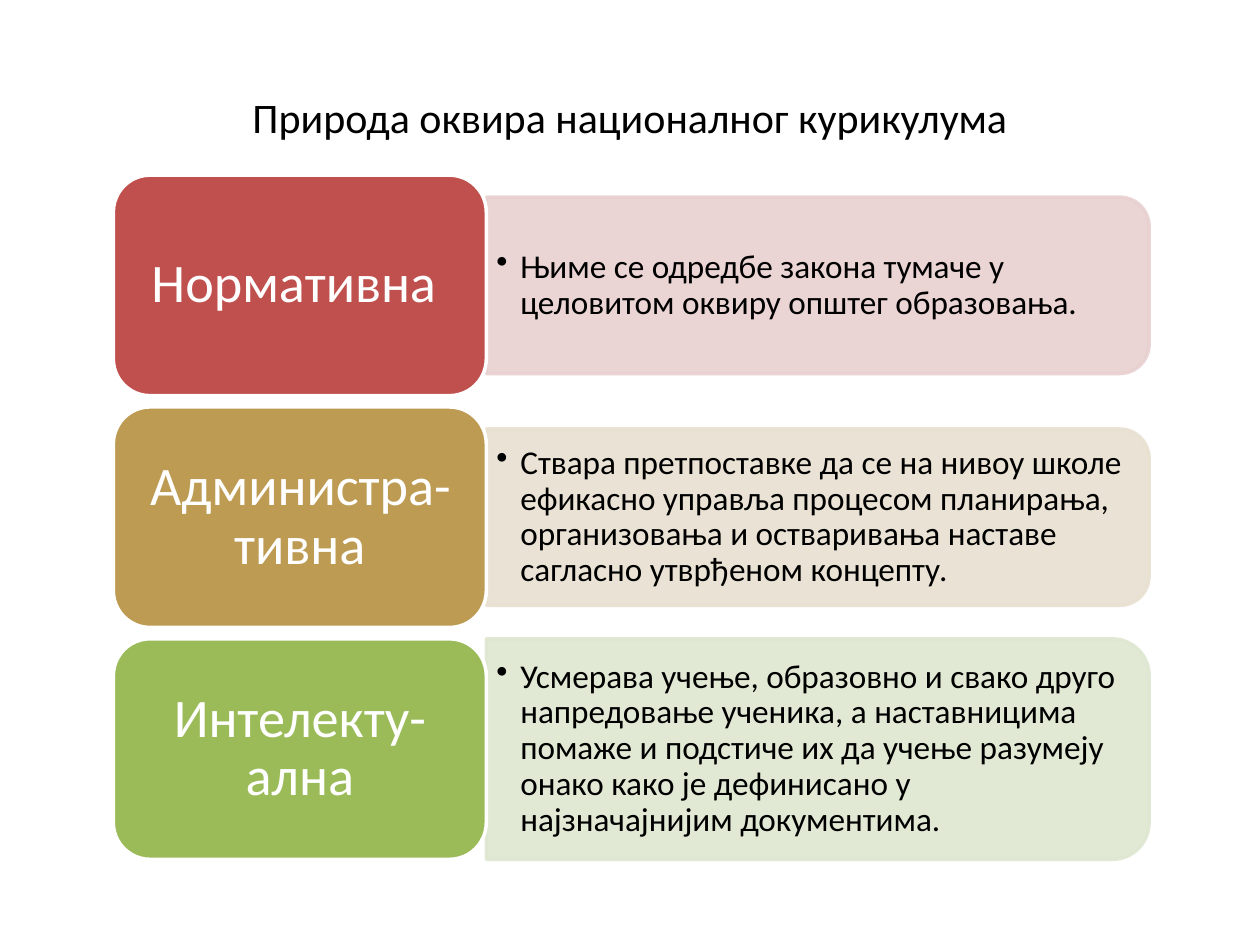
from lxml.etree import SubElement
from pptx import Presentation
from pptx.dml.color import RGBColor
from pptx.enum.shapes import MSO_SHAPE
from pptx.enum.text import MSO_ANCHOR, PP_ALIGN
from pptx.oxml.ns import qn
from pptx.util import Inches, Pt

FONT = "Calibri"
LABEL_LEFT, LABEL_WIDTH, LABEL_HEIGHT = 0.9, 2.96, 1.75
FIRST_TOP, ROW_PITCH = 1.39, 1.84
DETAIL_LEFT, DETAIL_WIDTH = LABEL_LEFT + LABEL_WIDTH, 5.26

ROWS = [
    ("Нормативна ", "C0504D", "E8D0D0", 1.4,
     "Њиме се одредбе закона тумаче у целовитом оквиру општег образовања."),
    ("Администра-тивна", "BD9B53", "E8E1D1", 1.4,
     "Ствара претпоставке да се на нивоу школе ефикасно управља процесом "
     "планирања, организовања и остваривања наставе сагласно утврђеном концепту."),
    ("Интелекту-ална", "9BBB59", "DEE7D1", 1.75,
     "Усмерава учење, образовно и свако друго напредовање ученика, а "
     "наставницима помаже и подстиче их да учење разумеју онако како је "
     "дефинисано у најзначајнијим документима."),
]


def paint(color_format, color, opacity=100):
    """Set a solid fill's colour from a hex string, with opacity in percent."""
    color_format.solid()
    color_format.fore_color.rgb = RGBColor.from_string(color)
    if opacity < 100:
        for node in color_format._xPr.iter(qn("a:srgbClr")):
            if node.find(qn("a:alpha")) is None:
                SubElement(node, qn("a:alpha"), val=str(opacity * 1000))


def write(shape, text, size, color, align, margins=(0.1, 0.05), line_spacing=None):
    """Write one vertically centred paragraph and return it."""
    frame = shape.text_frame
    frame.word_wrap = True
    frame.vertical_anchor = MSO_ANCHOR.MIDDLE
    frame.margin_left = frame.margin_right = Inches(margins[0])
    frame.margin_top = frame.margin_bottom = Inches(margins[1])
    paragraph = frame.paragraphs[0]
    paragraph.text = text
    paragraph.alignment = align
    paragraph.line_spacing = line_spacing
    paragraph.font.name = FONT
    paragraph.font.size = Pt(size)
    paint(paragraph.font.fill, color)
    return paragraph


def add_panel(slide, kind, box, fill, line, opacity=100):
    """Add a filled and outlined preset shape."""
    panel = slide.shapes.add_shape(kind, *map(Inches, box))
    panel.shadow.inherit = False
    paint(panel.fill, fill, opacity)
    panel.line.width = Pt(2)
    paint(panel.line.fill, line, opacity)
    return panel


def add_textbox(slide, box):
    """Add an empty text box."""
    return slide.shapes.add_textbox(*map(Inches, box))


def add_bullet(paragraph, indent):
    """Give a paragraph a round bullet with a hanging indent."""
    properties = paragraph._p.get_or_add_pPr()
    properties.set("marL", str(Inches(indent)))
    properties.set("indent", str(-Inches(indent)))
    SubElement(properties, qn("a:buChar"), char="•")


def add_detail(slide, middle, height, tint, text):
    """Add the tinted strip, rounded on its right side, and its bulleted text."""
    center = DETAIL_LEFT + DETAIL_WIDTH / 2
    strip = add_panel(
        slide, MSO_SHAPE.ROUND_2_SAME_RECTANGLE,
        (center - height / 2, middle - DETAIL_WIDTH / 2, height, DETAIL_WIDTH),
        tint, tint, 90)
    strip.rotation = 90
    inset = height * 0.05
    detail = add_textbox(slide, (DETAIL_LEFT, middle - height / 2 + inset,
                                 DETAIL_WIDTH - inset, height - 2 * inset))
    paragraph = write(detail, text, 19, "000000", PP_ALIGN.LEFT, (0.08, 0.04), 0.9)
    add_bullet(paragraph, 0.19)


def add_label(slide, top, color, text):
    """Add the rounded label at the left of a row."""
    label = add_panel(slide, MSO_SHAPE.ROUNDED_RECTANGLE,
                      (LABEL_LEFT, top, LABEL_WIDTH, LABEL_HEIGHT), color, "FFFFFF")
    write(label, text, 31, "FFFFFF", PP_ALIGN.CENTER, (0.13, 0.06), 0.9)


def main():
    """Build and save the slide."""
    deck = Presentation()
    deck.slide_width, deck.slide_height = Inches(10), Inches(7.5)
    slide = deck.slides.add_slide(deck.slide_layouts[6])
    title = add_textbox(slide, (0.5, 0.3, 9, 1.25))
    write(title, "Природа оквира националног курикулума", 24, "000000", PP_ALIGN.CENTER)
    for row, (name, color, tint, height, text) in enumerate(ROWS):
        top = FIRST_TOP + row * ROW_PITCH
        add_detail(slide, top + LABEL_HEIGHT / 2, height, tint, text)
        add_label(slide, top, color, name)
    deck.save("out.pptx")


if __name__ == "__main__":
    main()
